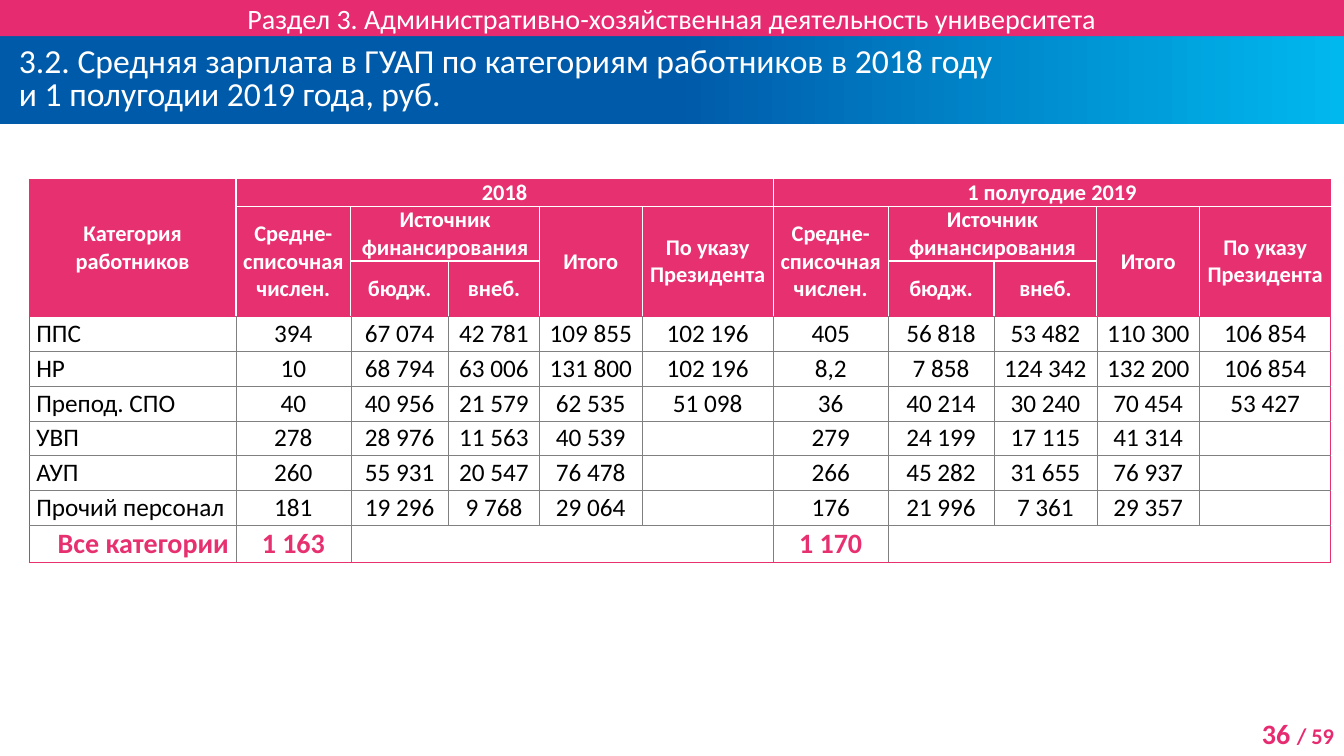
"""Build the slide with average salaries by staff category for 2018 and the first half of 2019."""
import copy

import lxml.etree
import pptx
import pptx.dml.color
import pptx.enum.shapes
import pptx.enum.text
import pptx.oxml.ns
import pptx.util

Inches = pptx.util.Inches
Pt = pptx.util.Pt
qn = pptx.oxml.ns.qn
ALIGN = pptx.enum.text.PP_ALIGN
MIDDLE = pptx.enum.text.MSO_ANCHOR.MIDDLE
COLORS = {"pink": "E72B70", "table": "E73070", "blue": "005AAA", "sky": "00B8EE",
          "white": "FFFFFF", "black": "000000", "grid": "808080"}


def rgb(name):
    return pptx.dml.color.RGBColor.from_string(COLORS[name])


def write(p, text, size, color, bold=False, align=ALIGN.LEFT):
    p.text = text
    p.alignment = align
    for r in p.runs:
        r.font.name = "Calibri"
        r.font.size = Pt(size)
        r.font.bold = bold
        r.font.color.rgb = rgb(color)


prs = pptx.Presentation()
prs.slide_width = Inches(13.33)
prs.slide_height = Inches(7.5)
s = prs.slides.add_slide(prs.slide_layouts[6])

bars = []
for top, height, inset in [(0.36, 0.87, 0.1), (0, 0.36, 0)]:
    sp = s.shapes.add_shape(pptx.enum.shapes.MSO_SHAPE.RECTANGLE,
                            0, Inches(top), prs.slide_width, Inches(height))
    sp.shadow.inherit = False
    sp.line.fill.background()
    tf = sp.text_frame
    tf.word_wrap = True
    tf.vertical_anchor = MIDDLE
    tf.margin_left = tf.margin_right = Inches(inset)
    tf.margin_top = tf.margin_bottom = 0
    bars.append(sp)
title, section = bars

title.fill.gradient()
title.fill.gradient_angle = 0
stops = title.fill.gradient_stops
for stop, color, position in zip(stops, ["blue", "sky"], [0, 1]):
    stop.color.rgb = rgb(color)
    stop.position = position
first_stop = title.element.spPr.find(".//" + qn("a:gs"))
middle_stop = copy.deepcopy(first_stop)
middle_stop.set("pos", "50000")
first_stop.addnext(middle_stop)
p = title.text_frame.paragraphs[0]
write(p, "3.2. Средняя зарплата в ГУАП по категориям работников в 2018 году\n"
         "и 1 полугодии 2019 года, руб.", 24, "white")
p.line_spacing = Pt(24)
p._p.get_or_add_pPr().set("marL", str(Inches(0.09)))

section.fill.solid()
section.fill.fore_color.rgb = rgb("pink")
write(section.text_frame.paragraphs[0],
      "Раздел 3. Административно-хозяйственная деятельность университета",
      20, "white", align=ALIGN.CENTER)

sp = s.shapes.add_textbox(Inches(12.13), Inches(7.06), Inches(1.2), Inches(0.44))
sp.text_frame.word_wrap = True
p = sp.text_frame.paragraphs[0]
write(p, "36 ", 20, "pink", True, ALIGN.RIGHT)
r = p.add_run()
r.text = "/ 59"
r.font.name = "Calibri"
r.font.size = Pt(16)
r.font.bold = True
r.font.color.rgb = rgb("pink")

group = ["Средне-\nсписочная\nчислен.", "Источник\nфинансирования", "", "Итого", "По указу\nПрезидента"]
sources = ["", "бюдж.", "внеб.", "", ""]
rows = [
    ["Категория\nработников", "2018", "", "", "", "", "1 полугодие 2019", "", "", "", ""],
    [""] + group * 2,
    [""] + sources * 2,
    ["ППС", "394", "67 074", "42 781", "109 855", "102 196",
     "405", "56 818", "53 482", "110 300", "106 854"],
    ["НР", "10", "68 794", "63 006", "131 800", "102 196",
     "8,2", "7 858", "124 342", "132 200", "106 854"],
    ["Препод. СПО", "40", "40 956", "21 579", "62 535", "51 098",
     "36", "40 214", "30 240", "70 454", "53 427"],
    ["УВП", "278", "28 976", "11 563", "40 539", "", "279", "24 199", "17 115", "41 314", ""],
    ["АУП", "260", "55 931", "20 547", "76 478", "", "266", "45 282", "31 655", "76 937", ""],
    ["Прочий персонал", "181", "19 296", "9 768", "29 064", "",
     "176", "21 996", "7 361", "29 357", ""],
    ["Все категории", "1 163", "", "", "", "", "1 170", "", "", "", ""],
]
widths = [2.05, 1.14, 0.97, 0.9, 1.02, 1.3, 1.14, 1.05, 1.02, 1.02, 1.3]
heights = [0.27, 0.54, 0.55] + [0.345] * 6 + [0.37]
header_rows, last_row, last_col = 3, len(rows) - 1, len(widths) - 1

table = s.shapes.add_table(len(rows), len(widths), Inches(0.29), Inches(1.78),
                           Inches(sum(widths)), Inches(sum(heights))).table
table.first_row = table.horz_banding = False
for column, width in zip(table.columns, widths):
    column.width = Inches(width)
for row, height in zip(table.rows, heights):
    row.height = Inches(height)

table.cell(0, 0).merge(table.cell(2, 0))
for c in (1, 6):
    table.cell(0, c).merge(table.cell(0, c + 4))
    table.cell(1, c + 1).merge(table.cell(1, c + 2))
    table.cell(last_row, c + 1).merge(table.cell(last_row, c + 4))
    for offset in (0, 3, 4):
        table.cell(1, c + offset).merge(table.cell(2, c + offset))

for i, values in enumerate(rows):
    for j, value in enumerate(values):
        cell = table.cell(i, j)
        if cell.is_spanned:
            continue
        header = i < header_rows
        cell.vertical_anchor = MIDDLE
        cell.margin_left = cell.margin_right = Inches(0.07)
        cell.margin_top = cell.margin_bottom = 0
        if header:
            cell.fill.solid()
            cell.fill.fore_color.rgb = rgb("table")
            size, color, bold = 16, "white", True
        else:
            cell.fill.background()
            size, color, bold = (20, "table", True) if i == last_row else (18, "black", False)
        align = ALIGN.CENTER
        if j == 0 and not header:
            align = ALIGN.RIGHT if i == last_row else ALIGN.LEFT
        write(cell.text_frame.paragraphs[0], value, size, color, bold, align)

        bottom = i + cell.span_height - 1 if cell.is_merge_origin else i
        right = j + cell.span_width - 1 if cell.is_merge_origin else j
        outer = {"L": j == 0, "R": right == last_col, "T": i in (0, header_rows),
                 "B": bottom in (header_rows - 1, last_row)}
        tcPr = cell._tc.get_or_add_tcPr()
        for n, (side, is_outer) in enumerate(outer.items()):
            edge = "table" if is_outer else "white" if header else "grid"
            ln = lxml.etree.Element(qn("a:ln" + side), w=str(Pt(0.25 if edge == "grid" else 1)))
            fill = lxml.etree.SubElement(ln, qn("a:solidFill"))
            lxml.etree.SubElement(fill, qn("a:srgbClr"), val=COLORS[edge])
            tcPr.insert(n, ln)

prs.save("out.pptx")
